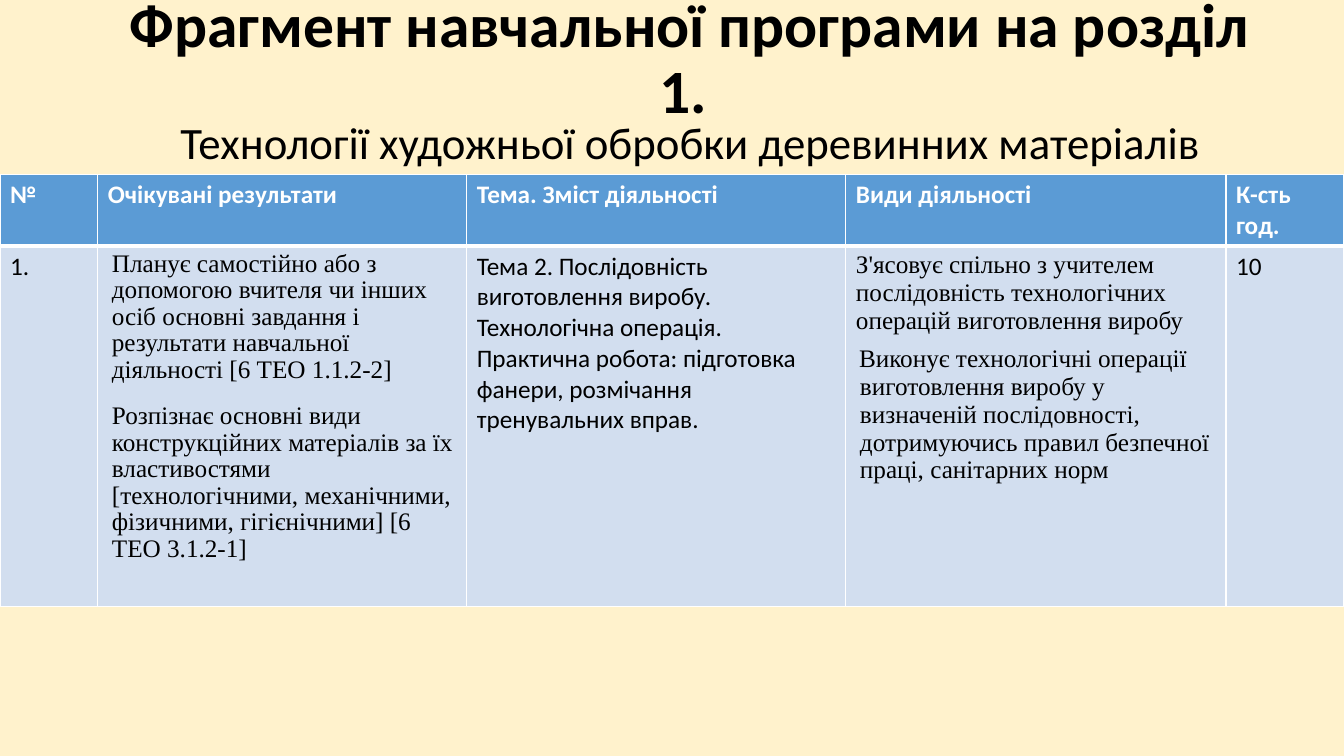
from dataclasses import dataclass

from lxml import etree
from pptx import Presentation
from pptx.dml.color import RGBColor
from pptx.enum.text import MSO_ANCHOR, MSO_AUTO_SIZE, PP_ALIGN
from pptx.oxml.ns import qn
from pptx.util import Inches, Pt

CENTER = PP_ALIGN.CENTER
MIDDLE = MSO_ANCHOR.MIDDLE
NO_FIT = MSO_AUTO_SIZE.NONE
GROW = MSO_AUTO_SIZE.SHAPE_TO_FIT_TEXT

SANS, SERIF = "Calibri", "Times New Roman"
BLACK, WHITE = "000000", "FFFFFF"
CREAM, BLUE, PALE = "FFF2CC", "5B9BD5", "D2DEEF"
SPACED = {"space_before": Pt(7.2), "space_after": Pt(7.2)}
TIGHT = {"line_spacing": 0.95, **SPACED}


@dataclass(frozen=True)
class Para:
    text: str
    font: str = SANS
    size: float = 18
    color: str = BLACK
    bold: bool = False
    form: dict | None = None
    left: float = 0
    hang: float = 0


@dataclass(frozen=True)
class Column:
    width: float
    head: str
    body: tuple[Para, ...]


COLUMNS = (
    Column(0.97, "№", (Para("1."),)),
    Column(3.66, "Очікувані результати", (
        Para("Планує самостійно або з допомогою вчителя чи інших осіб основні "
             "завдання і результати навчальної діяльності [6 ТЕО 1.1.2-2]",
             SERIF, form=TIGHT, left=0.04),
        Para("Розпізнає основні види конструкційних матеріалів за їх "
             "властивостями [технологічними, механічними, фізичними, "
             "гігієнічними] [6 ТЕО 3.1.2-1]",
             SERIF, form=TIGHT, left=0.04),
    )),
    Column(3.76, "Тема. Зміст діяльності", (
        Para("Тема 2. Послідовність виготовлення виробу. Технологічна операція. "
             "Практична робота: підготовка фанери, розмічання тренувальних вправ."),
    )),
    Column(3.77, "Види діяльності", (
        Para("З'ясовує спільно з учителем послідовність технологічних операцій "
             "виготовлення виробу", SERIF),
        Para("Виконує технологічні операції виготовлення виробу у визначеній "
             "послідовності, дотримуючись правил безпечної праці, санітарних норм",
             SERIF, form=SPACED, left=0.04, hang=-0.01),
    )),
    Column(1.17, "К-сть год.", (Para("10"),)),
)


def paint(target, color: str) -> None:
    target.solid()
    target.fore_color.rgb = RGBColor.from_string(color)


def write(frame, paras: tuple[Para, ...]) -> None:
    for i, para in enumerate(paras):
        p = frame.paragraphs[0] if i == 0 else frame.add_paragraph()
        for name, value in (para.form or {}).items():
            setattr(p, name, value)
        if para.left:
            props = p._p.get_or_add_pPr()
            props.set("marL", str(Inches(para.left)))
            props.set("indent", str(Inches(para.hang)))
        run = p.add_run()
        run.text = para.text
        look = {"name": para.font, "size": Pt(para.size), "bold": para.bold}
        for name, value in look.items():
            setattr(run.font, name, value)
        paint(run.font.fill, para.color)


def place(shape, left: float, top: float, width: float, height: float) -> None:
    box = {"left": left, "top": top, "width": width, "height": height}
    for name, value in box.items():
        setattr(shape, name, Inches(value))


def edge(cell, base: float) -> None:
    props = cell._tc.get_or_add_tcPr()
    for side, width in {"L": 1, "R": 1, "T": 1, "B": base}.items():
        line = etree.SubElement(props, qn(f"a:ln{side}"), w=str(Pt(width)))
        fill = etree.SubElement(line, qn("a:solidFill"))
        etree.SubElement(fill, qn("a:srgbClr"), val=WHITE)


def fill_cell(cell, paras: tuple[Para, ...], color: str, base: float) -> None:
    edge(cell, base)
    paint(cell.fill, color)
    write(cell.text_frame, paras)


def main() -> None:
    deck = Presentation()
    deck.slide_width, deck.slide_height = Inches(13.33), Inches(7.5)
    slide = deck.slides.add_slide(deck.slide_layouts[5])
    paint(slide.background.fill, CREAM)

    # Title
    title = slide.shapes.title
    place(title, 0.96, 0, 11.77, 1.2)
    frame = title.text_frame
    frame.vertical_anchor, frame.auto_size = MIDDLE, NO_FIT
    write(frame, (Para("Фрагмент навчальної програми на розділ 1. ", size=44, bold=True,
                       form={"alignment": CENTER, "line_spacing": 0.9}),))

    # Programme table
    grid = slide.shapes.add_table(2, len(COLUMNS), Inches(0), Inches(1.73),
                                  Inches(13.33), Inches(4.28)).table
    grid.horz_banding = False
    for row, height in zip(grid.rows, (0.7, 3.58)):
        row.height = Inches(height)
    for i, col in enumerate(COLUMNS):
        grid.columns[i].width = Inches(col.width)
        head = (Para(col.head, color=WHITE, bold=True),)
        fill_cell(grid.cell(0, i), head, BLUE, 3)
        fill_cell(grid.cell(1, i), col.body, PALE, 1)

    # Subtitle
    note = slide.shapes.add_textbox(Inches(1.22), Inches(1.09), Inches(11.26), Inches(0.64))
    frame = note.text_frame
    frame.word_wrap, frame.auto_size = True, GROW
    write(frame, (Para("Технології художньої обробки деревинних матеріалів", size=32,
                       form={"alignment": CENTER}),))

    deck.save("out.pptx")


if __name__ == "__main__":
    main()
